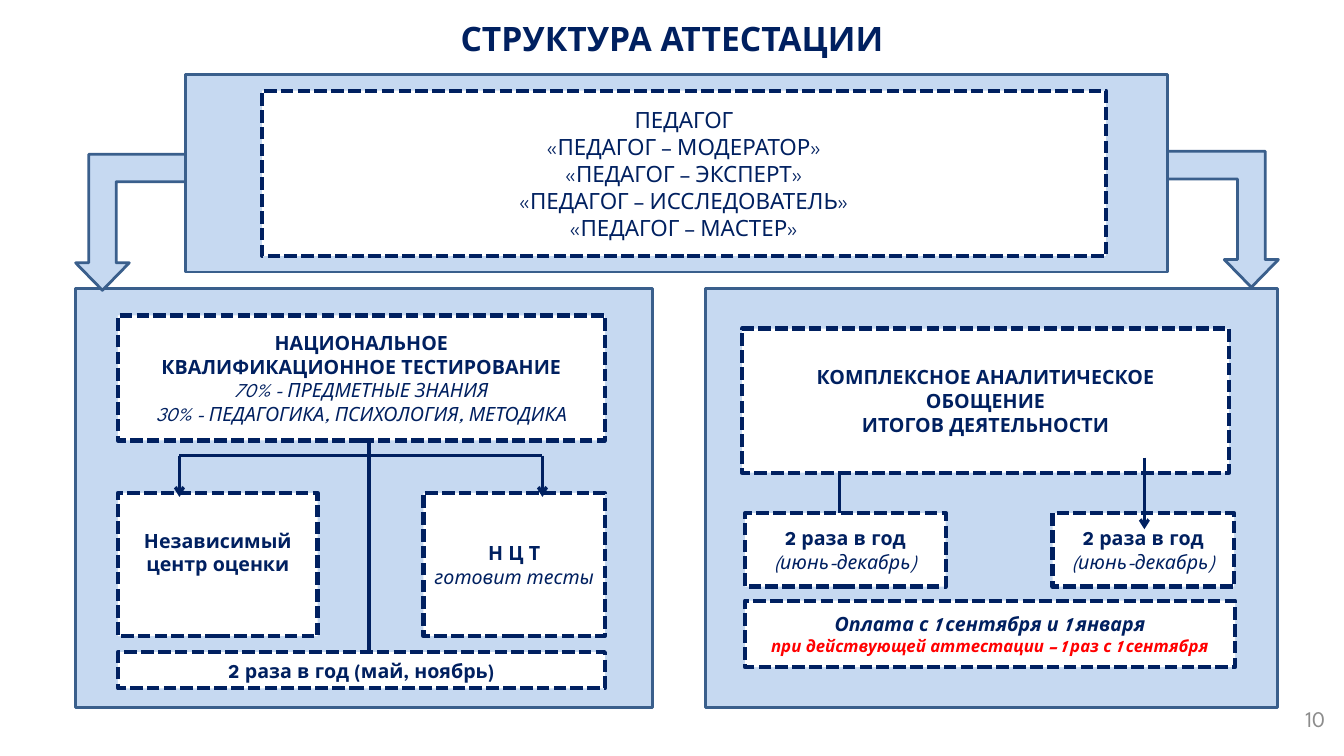
import pptx
import pptx.util
import pptx.dml.color
import pptx.enum.dml
import pptx.enum.shapes
import pptx.enum.text
import pptx.oxml.ns
import lxml.etree

PX = 9144
FONT = "League Spartan"
COLOURS = {"navy": "002060", "pale": "C6D9F1", "steel": "3A5F8C",
           "white": "FFFFFF", "red": "FF0000", "grey": "8C8C8C"}
SHAPES = pptx.enum.shapes.MSO_SHAPE
ALIGN = pptx.enum.text.PP_ALIGN


def px(*lengths):
    """Turn px lengths into EMU."""
    return [length * PX for length in lengths]


def colour(name):
    """Look up a colour of the slide."""
    return pptx.dml.color.RGBColor.from_string(COLOURS[name])


def write(frame, lines, align=ALIGN.CENTER):
    """Fill a text frame with (text, size, style, colour) lines, style holding b and i."""
    frame.word_wrap = True
    frame.vertical_anchor = pptx.enum.text.MSO_ANCHOR.MIDDLE
    for index, (text, size, style, tint) in enumerate(lines):
        paragraph = frame.paragraphs[0] if index == 0 else frame.add_paragraph()
        paragraph.alignment = align
        run = paragraph.add_run()
        run.text = text
        run.font.name = FONT
        run.font.size = pptx.util.Pt(size)
        run.font.bold = "b" in style
        run.font.italic = "i" in style
        run.font.color.rgb = colour(tint)


def add_block(slide, preset, box, fill, line=None, width=2):
    """Draw one filled preset shape."""
    block = slide.shapes.add_shape(preset, *px(*box))
    block.shadow.inherit = False
    block.fill.solid()
    block.fill.fore_color.rgb = colour(fill)
    if line:
        block.line.color.rgb = colour(line)
        block.line.width = pptx.util.Pt(width)
    else:
        block.line.fill.background()
    return block


def add_panel(slide, box):
    """Draw a pale background panel."""
    return add_block(slide, SHAPES.RECTANGLE, box, "pale", "steel")


def add_card(slide, box, lines):
    """Draw a white dashed card with centred lines."""
    card = add_block(slide, SHAPES.RECTANGLE, box, "white", "navy", 3)
    card.line.dash_style = pptx.enum.dml.MSO_LINE.SQUARE_DOT
    write(card.text_frame, lines)
    return card


def add_link(slide, start, end, arrow=True):
    """Draw a navy straight connector, with an arrowhead if wanted."""
    link = slide.shapes.add_connector(
        pptx.enum.shapes.MSO_CONNECTOR.STRAIGHT, *px(*start, *end))
    link.line.color.rgb = colour("navy")
    link.line.width = pptx.util.Pt(2.25)
    properties = link._element.spPr
    if arrow:
        head = lxml.etree.SubElement(link.line._get_or_add_ln(),
                                     pptx.oxml.ns.qn("a:tailEnd"))
        head.set("type", "arrow")
    lxml.etree.SubElement(properties, pptx.oxml.ns.qn("a:effectLst"))


def add_bent_arrow(slide, box, mirrored=False):
    """Draw an arrow that leaves the top panel sideways and turns down."""
    arrow = add_block(slide, SHAPES.BENT_UP_ARROW, box, "pale", "steel")
    for index, value in enumerate((0.25, 0.244, 0.25)):
        arrow.adjustments[index] = value
    arrow.rotation = 180
    if mirrored:
        arrow._element.spPr.xfrm.set("flipH", "1")


def add_title(slide, box):
    """Draw the slide title."""
    title = add_block(slide, SHAPES.RECTANGLE, box, "white")
    write(title.text_frame, [("СТРУКТУРА АТТЕСТАЦИИ", 24, "b", "navy")])


def add_categories(slide, box):
    """Draw the top panel with the teacher categories."""
    left, top, width, height = box
    add_panel(slide, box)
    names = ["ПЕДАГОГ"] + [f"«ПЕДАГОГ – {level}»" for level in
                           ("МОДЕРАТОР", "ЭКСПЕРТ", "ИССЛЕДОВАТЕЛЬ", "МАСТЕР")]
    add_card(slide, (left + 76, top + 16, width - 137, height - 32),
             [(name, 16, "", "navy") for name in names])


def add_testing(slide, box):
    """Draw the left panel on national qualification testing."""
    left, top, width, height = box
    inner, wide = left + 42, 483
    add_panel(slide, box)
    add_card(slide, (inner, top + 27, wide, 124), [
        ("НАЦИОНАЛЬНОЕ", 14, "b", "navy"),
        ("КВАЛИФИКАЦИОННОЕ ТЕСТИРОВАНИЕ", 14, "b", "navy"),
        ("70% - ПРЕДМЕТНЫЕ ЗНАНИЯ", 14, "i", "navy"),
        ("30% - ПЕДАГОГИКА, ПСИХОЛОГИЯ, МЕТОДИКА", 14, "i", "navy")])
    centre = add_card(slide, (inner, top + 203, 198, 142),
                      [("Независимый центр оценки", 14, "b", "navy")])
    centre.text_frame.margin_bottom = 29 * PX
    add_card(slide, (inner + wide - 180, top + 203, 180, 142),
             [("Н Ц Т", 14, "b", "navy"), ("готовит тесты", 14, "i", "navy")])
    trunk, branch = left + 291, top + 166
    branch_ends = (left + 103, left + 463)
    add_link(slide, (trunk, top + 151), (trunk, top + 373))
    add_card(slide, (inner, top + 361, wide, 36),
             [("2 раза в год (май, ноябрь)", 14, "b", "navy")])
    add_link(slide, (branch_ends[0], branch), (branch_ends[1], branch), arrow=False)
    for x in branch_ends:
        add_link(slide, (x, branch), (x, branch + 41))


def add_summary(slide, box):
    """Draw the right panel on the analytical summary of results."""
    left, top, width, height = box
    inner = left + 39
    sessions = [("2 раза в год", 14, "b", "navy"), ("(июнь-декабрь)", 14, "i", "navy")]
    add_panel(slide, box)
    add_card(slide, (left + 36, top + 40, 483, 143),
             [(line, 14, "b", "navy") for line in
              ("КОМПЛЕКСНОЕ АНАЛИТИЧЕСКОЕ", "ОБОЩЕНИЕ", "ИТОГОВ ДЕЯТЕЛЬНОСТИ")])
    add_link(slide, (left + 133, top + 182), (left + 133, top + 250))
    for x, card_width in ((inner, 199), (left + 344, 180)):
        add_card(slide, (x, top + 223, card_width, 73), sessions)
    add_link(slide, (left + 435, top + 168), (left + 435, top + 239))
    add_card(slide, (inner, top + 310, 486, 66), [
        ("Оплата с 1 сентября и 1 января", 14, "bi", "navy"),
        ("при действующей аттестации – 1 раз с 1 сентября", 12, "bi", "red")])


def add_page_number(slide, box):
    """Write the page number at the lower right."""
    number = slide.shapes.add_textbox(*px(*box))
    write(number.text_frame, [("10", 16, "", "grey")], ALIGN.RIGHT)


def main():
    """Build the slide and save it."""
    deck = pptx.Presentation()
    deck.slide_width, deck.slide_height = px(1333, 750)
    slide = deck.slides.add_slide(deck.slide_layouts[6])
    add_title(slide, (70, 22, 1193, 31))
    add_categories(slide, (184, 74, 974, 196))
    add_testing(slide, (75, 286, 572, 416))
    add_summary(slide, (700, 286, 567, 416))
    add_bent_arrow(slide, (75, 153, 109, 135))
    add_bent_arrow(slide, (1158, 150, 110, 135), mirrored=True)
    add_page_number(slide, (1013, 693, 311, 40))
    deck.save("out.pptx")


if __name__ == "__main__":
    main()
